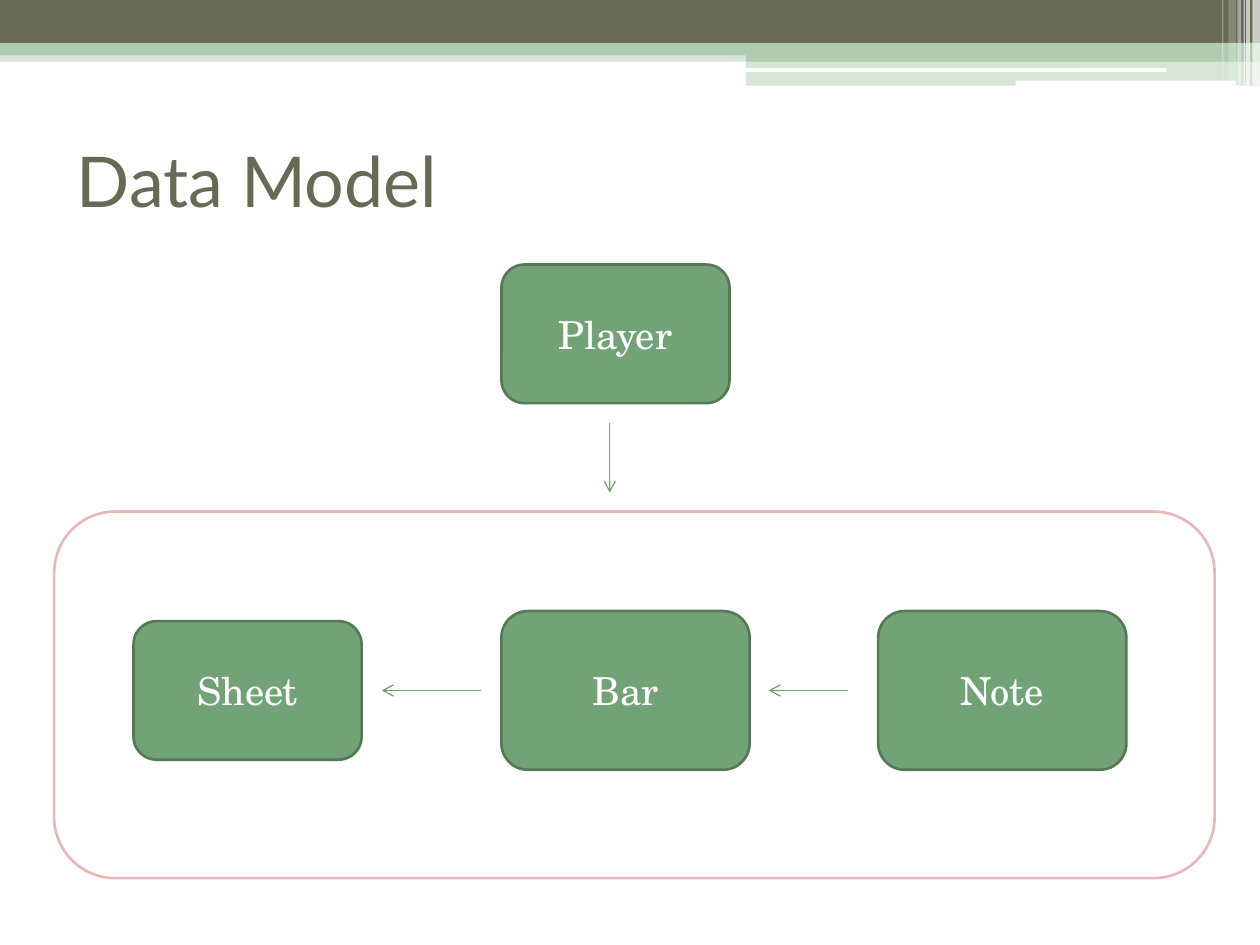
from lxml import etree
from pptx import Presentation
from pptx.dml.color import RGBColor
from pptx.enum.shapes import MSO_CONNECTOR, MSO_SHAPE
from pptx.enum.text import MSO_ANCHOR, PP_ALIGN
from pptx.oxml.ns import qn
from pptx.util import Inches, Pt

RECTANGLE = MSO_SHAPE.RECTANGLE
ROUNDED = MSO_SHAPE.ROUNDED_RECTANGLE
STRAIGHT = MSO_CONNECTOR.STRAIGHT
MIDDLE = MSO_ANCHOR.MIDDLE
LEFT, CENTER = PP_ALIGN.LEFT, PP_ALIGN.CENTER

OLIVE, MINT, WHITE = "676A55", "B0CCB0", "FFFFFF"
GREEN, DARK_GREEN, PINK = "72A376", "547957", "E8B7B7"
TITLE_FORMAT = {"name": "Lato", "size": Pt(40), "bold": False}
LABEL_FORMAT = {"name": "TeX Gyre Schola", "size": Pt(22)}

# Header bands: left, top, width, height, colour, opacity in percent
BANDS = [
    (0, 0.4, 10, 0.09, MINT, 50),
    (0, 0, 10, 0.34, OLIVE, 100),
    (0, 0.34, 10, 0.1, MINT, 100),
    (5.92, 0.39, 4.08, 0.1, MINT, 100),
    (5.92, 0.48, 4.08, 0.2, MINT, 50),
]
# White rules cut into the bands: left, top, width, height
RULES = [(5.91, 0.54, 3.35, 0.03), (8.06, 0.64, 1.75, 0.04)]
# Vertical stripes at the right edge: left, width, height, opacity
STRIPES = [
    (9.94, 0.06, 0.68, 65),
    (9.89, 0.03, 0.68, 65),
    (9.87, 0.01, 0.68, 60),
    (9.82, 0.03, 0.68, 40),
    (9.75, 0.06, 0.64, 20),
    (9.7, 0.01, 0.64, 30),
]

# Diagram: the row of entities shares one centre line
ROW_CENTER = 5.48
SMALL, LARGE = (1.81, 1.1), (1.97, 1.26)
ROW_ENTITIES = [("Sheet", 1.06, SMALL), ("Bar", 3.98, LARGE), ("Note", 6.97, LARGE)]
ARROWS = [
    ((6.73, ROW_CENTER), (6.1, ROW_CENTER)),
    ((3.82, ROW_CENTER), (3.03, ROW_CENTER)),
    ((4.84, 3.36), (4.84, 3.91)),
]


def color(hex_string):
    return RGBColor.from_string(hex_string)


def add_block(slide, kind, box, fill=None, line=None, opacity=100):
    shape = slide.shapes.add_shape(kind, *map(Inches, box))
    shape.shadow.inherit = False
    if fill:
        shape.fill.solid()
        shape.fill.fore_color.rgb = color(fill)
        if opacity < 100:
            tint = shape.fill._xPr.find(".//" + qn("a:srgbClr"))
            etree.SubElement(tint, qn("a:alpha"), val=str(opacity * 1000))
    else:
        shape.fill.background()
    if line:
        shape.line.color.rgb = color(line)
        shape.line.width = Pt(1.5)
    else:
        shape.line.fill.background()
    return shape


def write_text(shape, text, text_color, alignment, text_format):
    frame = shape.text_frame
    frame.vertical_anchor = MIDDLE
    paragraph = frame.paragraphs[0]
    paragraph.alignment = alignment
    run = paragraph.add_run()
    run.text = text
    run.font.color.rgb = color(text_color)
    for name, value in text_format.items():
        setattr(run.font, name, value)


def add_entity(slide, name, left, top, size):
    shape = add_block(slide, ROUNDED, (left, top, *size), GREEN, DARK_GREEN)
    write_text(shape, name, WHITE, CENTER, LABEL_FORMAT)


def add_arrow(slide, start, end):
    arrow = slide.shapes.add_connector(STRAIGHT, *map(Inches, start + end))
    arrow.line.color.rgb = color(GREEN)
    arrow.line.width = Pt(0.75)
    etree.SubElement(arrow.line._get_or_add_ln(), qn("a:tailEnd"), type="arrow")
    etree.SubElement(arrow._element.spPr, qn("a:effectLst"))


def add_header(slide):
    for *box, fill, opacity in BANDS:
        add_block(slide, RECTANGLE, box, fill, opacity=opacity)
    for box in RULES:
        add_block(slide, ROUNDED, box, WHITE)
    for left, width, height, opacity in STRIPES:
        add_block(slide, RECTANGLE, (left, 0, width, height), WHITE, opacity=opacity)


def set_title(slide, text):
    title = slide.shapes.title
    title.left, title.top, title.width, title.height = map(Inches, (0.51, 0.84, 9, 1.17))
    write_text(title, text, OLIVE, LEFT, TITLE_FORMAT)


def add_diagram(slide):
    # Frame around the row, then the entities and their arrows
    add_block(slide, ROUNDED, (0.43, 4.06, 9.21, 2.91), line=PINK)
    for name, left, size in ROW_ENTITIES:
        add_entity(slide, name, left, ROW_CENTER - size[1] / 2, size)
    add_entity(slide, "Player", 3.98, 2.1, SMALL)
    for start, end in ARROWS:
        add_arrow(slide, start, end)


def main():
    presentation = Presentation()
    presentation.slide_width, presentation.slide_height = Inches(10), Inches(7.5)
    title_only = presentation.slide_layouts[5]
    slide = presentation.slides.add_slide(title_only)
    add_header(slide)
    set_title(slide, "Data Model")
    add_diagram(slide)
    presentation.save("out.pptx")


if __name__ == "__main__":
    main()
